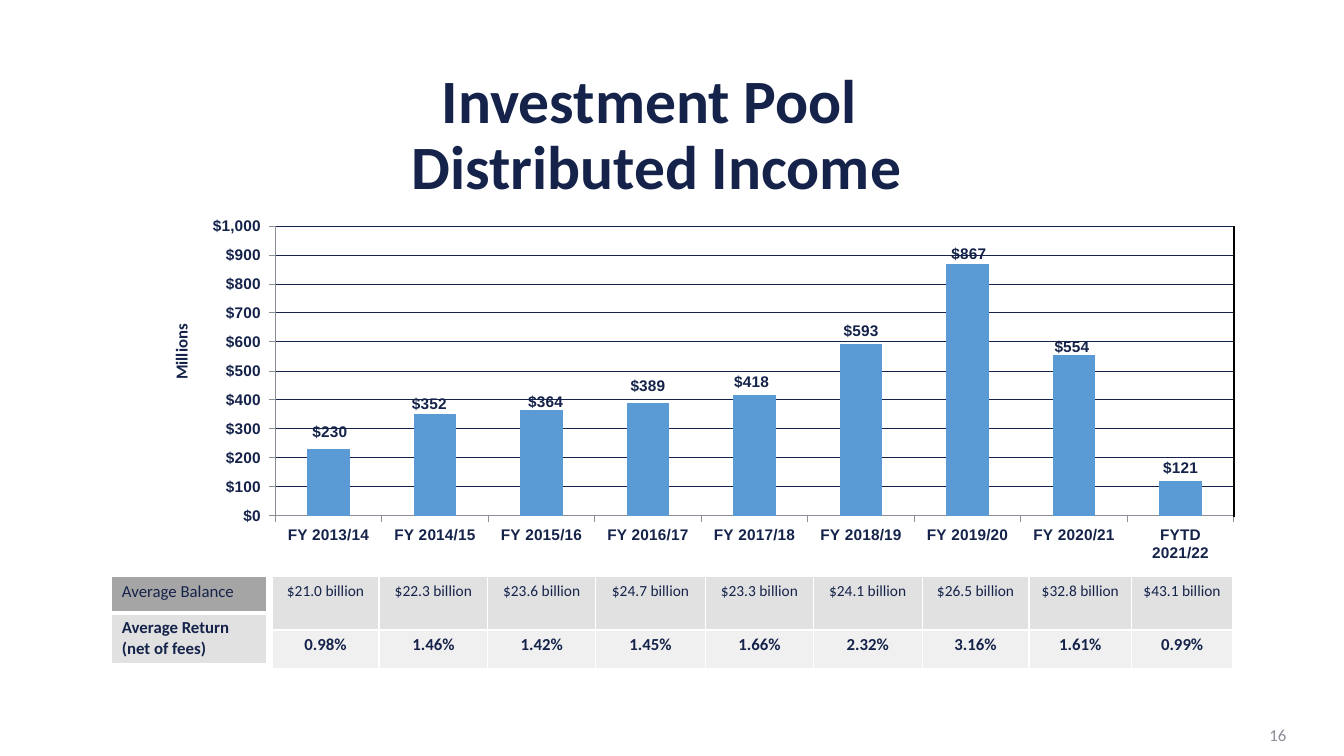
from copy import deepcopy
from dataclasses import dataclass

from lxml.etree import SubElement
from pptx import Presentation
from pptx.chart.data import CategoryChartData
from pptx.dml.color import RGBColor
from pptx.enum.chart import XL_CHART_TYPE, XL_LABEL_POSITION, XL_TICK_MARK
from pptx.enum.shapes import MSO_CONNECTOR
from pptx.enum.text import MSO_ANCHOR, PP_ALIGN
from pptx.oxml.ns import qn
from pptx.util import Pt

NAVY, GREY, BLUE, WHITE, BLACK = "15234A", "8C8D96", "5B9BD5", "FFFFFF", "000000"
DARK_FILL, MID_FILL, LIGHT_FILL = "A5A5A5", "E1E1E1", "F0F0F0"


@dataclass
class Area:
    left: float
    top: float
    width: float
    height: float

    def lengths(self):
        return Pt(self.left), Pt(self.top), Pt(self.width), Pt(self.height)


@dataclass
class CellStyle:
    size: float
    bold: bool
    fill: str
    bottom_border: float = 1


@dataclass
class Year:
    label: str
    income: int
    balance: str
    rate: str
    column_width: float
    label_shift: tuple[float, float] | None = None


YEARS = [
    Year("FY 2013/14", 230, "$21.0 billion", "0.98%", 76.3, (1, -3)),
    Year("FY 2014/15", 352, "$22.3 billion", "1.46%", 77.8, (-4, 2)),
    Year("FY 2015/16", 364, "$23.6 billion", "1.42%", 77, (3, 3)),
    Year("FY 2016/17", 389, "$24.7 billion", "1.45%", 78.5, (0, -3.5)),
    Year("FY 2017/18", 418, "$23.3 billion", "1.66%", 77, (-2, 0)),
    Year("FY 2018/19", 593, "$24.1 billion", "2.32%", 77.8),
    Year("FY 2019/20", 867, "$26.5 billion", "3.16%", 76.3, (1, 1.5)),
    Year("FY 2020/21", 554, "$32.8 billion", "1.61%", 73.4, (-1.5, 3.5)),
    Year("FYTD 2021/22", 121, "$43.1 billion", "0.99%", 72),
]
CHART_AREA = Area(106.6, 131, 782.6, 270)


def color(value: str) -> RGBColor:
    return RGBColor.from_string(value)


def style_font(font, size: float, bold=False, name="Calibri", value=NAVY) -> None:
    font.name, font.size, font.bold = name, Pt(size), bold
    font.color.rgb = color(value)


def style_line(line, value: str, width: float) -> None:
    line.color.rgb = color(value)
    line.width = Pt(width)


def add_text(page, area: Area, text: str, align, size: float, bold=False,
             value=NAVY, spacing=1.0) -> None:
    frame = page.shapes.add_textbox(*area.lengths()).text_frame
    frame.word_wrap = True
    frame.vertical_anchor = MSO_ANCHOR.MIDDLE
    para = frame.paragraphs[0]
    para.text = text
    para.alignment, para.line_spacing = align, spacing
    for span in para.runs:
        style_font(span.font, size, bold, value=value)


def set_layout(layout, **values) -> None:
    manual = SubElement(layout, qn("c:manualLayout"))
    for key, value in values.items():
        SubElement(manual, qn(f"c:{key}")).set("val", str(value))


def shift_labels(labels) -> None:
    """Move single data labels, keeping the shared label settings."""
    element = labels._element
    shared = [child for child in element if child.tag != qn("c:showLeaderLines")]
    moved = [(i, year.label_shift) for i, year in enumerate(YEARS) if year.label_shift]
    for position, (index, (across, down)) in enumerate(moved):
        label = SubElement(element, qn("c:dLbl"))
        SubElement(label, qn("c:idx")).set("val", str(index))
        set_layout(SubElement(label, qn("c:layout")),
                   x=round(across / CHART_AREA.width, 4),
                   y=round(down / CHART_AREA.height, 4))
        label.extend(deepcopy(child) for child in shared)
        element.insert(position, label)


def add_income_chart(page) -> None:
    data = CategoryChartData()
    data.categories = [year.label for year in YEARS]
    data.add_series("Series 1", [year.income for year in YEARS])
    chart = page.shapes.add_chart(
        XL_CHART_TYPE.COLUMN_CLUSTERED, *CHART_AREA.lengths(), data).chart
    chart.has_legend = chart.has_title = False
    style_font(chart.font, 18)

    # Axes
    for axis in (chart.category_axis, chart.value_axis):
        style_font(axis.tick_labels.font, 11, True, "Arial")
        style_line(axis.format.line, GREY, 0.5)
        axis.major_tick_mark = XL_TICK_MARK.OUTSIDE
        axis.minor_tick_mark = XL_TICK_MARK.NONE
    axis = chart.value_axis
    axis.minimum_scale, axis.maximum_scale, axis.major_unit = 0, 1000, 100
    axis.tick_labels.number_format = '"$"#,##0_);[Red]\\("$"#,##0\\)'
    axis.tick_labels.number_format_is_linked = False
    axis.has_major_gridlines = True
    style_line(axis.major_gridlines.format.line, NAVY, 0.5)
    frame = axis.axis_title.text_frame
    frame.text = "Millions"
    style_font(frame.paragraphs[0].runs[0].font, 12, True)
    body = frame._txBody.find(qn("a:bodyPr"))
    body.set("rot", "-5400000")
    body.set("vert", "horz")

    # Columns and their labels
    plot = chart.plots[0]
    plot.gap_width = 150
    plot.vary_by_categories = False
    series = plot.series[0]
    series.format.fill.solid()
    series.format.fill.fore_color.rgb = color(BLUE)
    labels = series.data_labels
    labels.show_value = True
    labels.number_format, labels.number_format_is_linked = '"$"#,##0', False
    labels.position = XL_LABEL_POSITION.OUTSIDE_END
    style_font(labels.font, 11, True, "Arial")
    shift_labels(labels)

    # Fixed places of the axis title and the plot
    title = axis.axis_title._element
    title_layout = title.find(qn("c:layout"))
    if title_layout is None:
        title_layout = SubElement(title, qn("c:layout"))
        title.insert(1, title_layout)
    set_layout(title_layout, xMode="edge", yMode="edge", x=0.016, y=0.366)
    area = chart._chartSpace.find(".//" + qn("c:plotArea"))
    for old in area.findall(qn("c:layout")):
        area.remove(old)
    layout = SubElement(area, qn("c:layout"))
    area.insert(0, layout)
    set_layout(layout, layoutTarget="inner", xMode="edge", yMode="edge",
               x=0.115, y=0.113, w=0.875, h=0.77)


def add_rule(page, x: float, top: float, bottom: float) -> None:
    rule = page.shapes.add_connector(
        MSO_CONNECTOR.STRAIGHT, Pt(x), Pt(top), Pt(x), Pt(bottom))
    style_line(rule.line, BLACK, 1.5)
    SubElement(rule._element.spPr, qn("a:effectLst"))


def add_grid(page, left: float, top: float, widths: list[float], heights: list[float],
             rows: list[list[str]], styles: list[CellStyle], align) -> None:
    area = Area(left, top, sum(widths), sum(heights))
    table = page.shapes.add_table(len(rows), len(widths), *area.lengths()).table
    table.first_row = table.horz_banding = False
    for column, width in zip(table.columns, widths):
        column.width = Pt(width)
    for row, height, texts, style in zip(table.rows, heights, rows, styles):
        row.height = Pt(height)
        for cell, text in zip(row.cells, texts):
            cell.text_frame.text = text
            for para in cell.text_frame.paragraphs:
                para.alignment = align
                style_font(para.runs[0].font, style.size, style.bold)
            properties = cell._tc.get_or_add_tcPr()
            for side in "LRTB":
                width = style.bottom_border if side == "B" else 1
                border = SubElement(properties, qn(f"a:ln{side}"), w=str(Pt(width)))
                fill = SubElement(border, qn("a:solidFill"))
                SubElement(fill, qn("a:srgbClr"), val=WHITE)
            cell.fill.solid()
            cell.fill.fore_color.rgb = color(style.fill)


def main() -> None:
    deck = Presentation()
    deck.slide_width, deck.slide_height = Pt(960), Pt(540)
    page = deck.slides.add_slide(deck.slide_layouts[6])

    # Title
    add_text(page, Area(151.2, 52.6, 635.8, 90), "Investment Pool \vDistributed Income",
             PP_ALIGN.CENTER, 44, True, spacing=0.9)

    # Chart with the rule at its right edge
    add_income_chart(page)
    add_rule(page, 881.4, 161.5, 369.4)

    # Row headings and yearly figures
    add_grid(page, 79.9, 411.8, [110.2], [26, 36],
             [["Average Balance"], ["Average Return\n(net of fees)"]],
             [CellStyle(12, False, DARK_FILL, 3), CellStyle(12, True, MID_FILL)],
             PP_ALIGN.LEFT)
    add_grid(page, 194.4, 411.8, [year.column_width for year in YEARS], [38.2, 27.4],
             [[year.balance for year in YEARS], [year.rate for year in YEARS]],
             [CellStyle(11, False, MID_FILL), CellStyle(12, True, LIGHT_FILL)],
             PP_ALIGN.CENTER)

    # Page number
    add_text(page, Area(709.9, 510.5, 216, 28.8), "16", PP_ALIGN.RIGHT, 12, value=GREY)
    deck.save("out.pptx")


if __name__ == "__main__":
    main()
